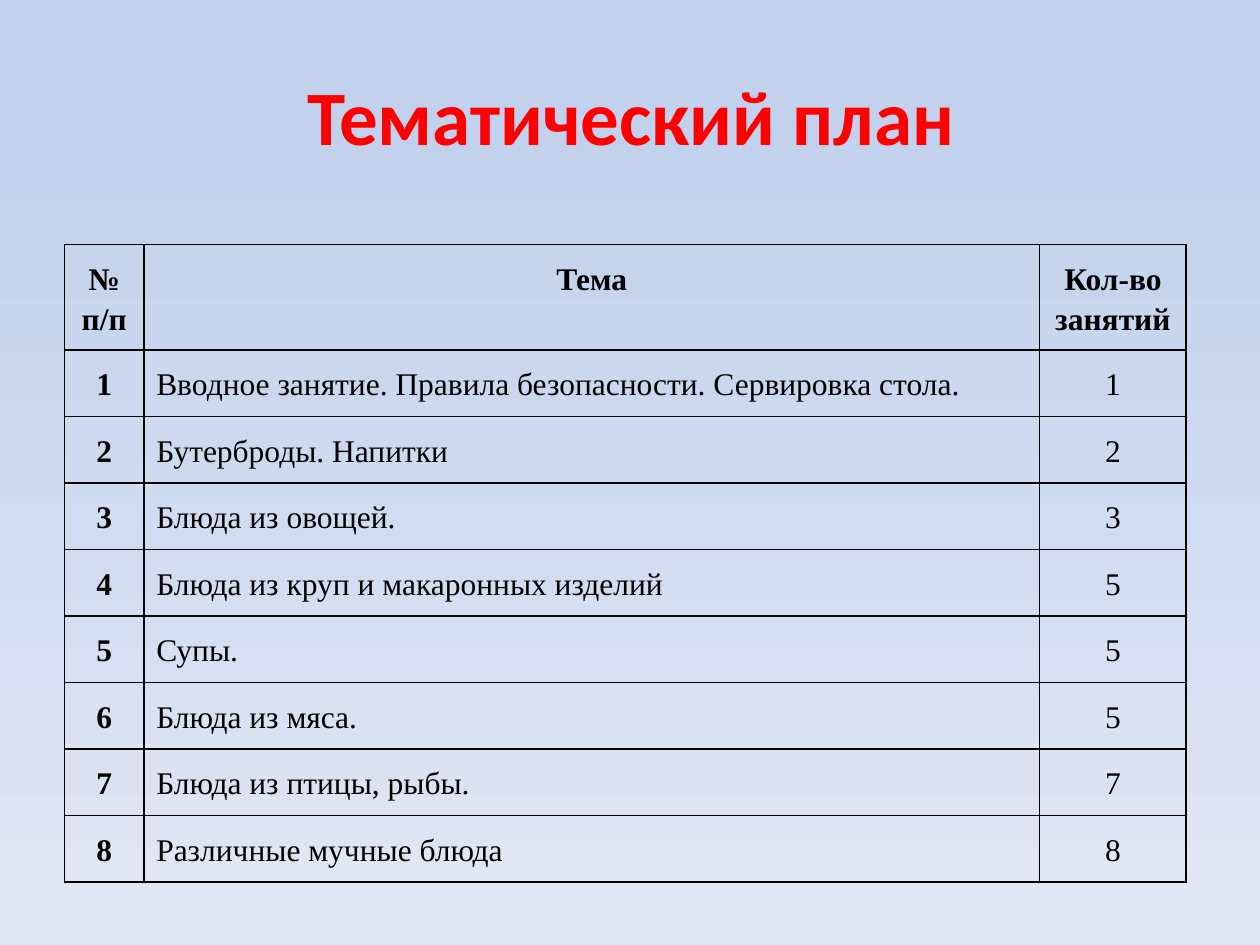
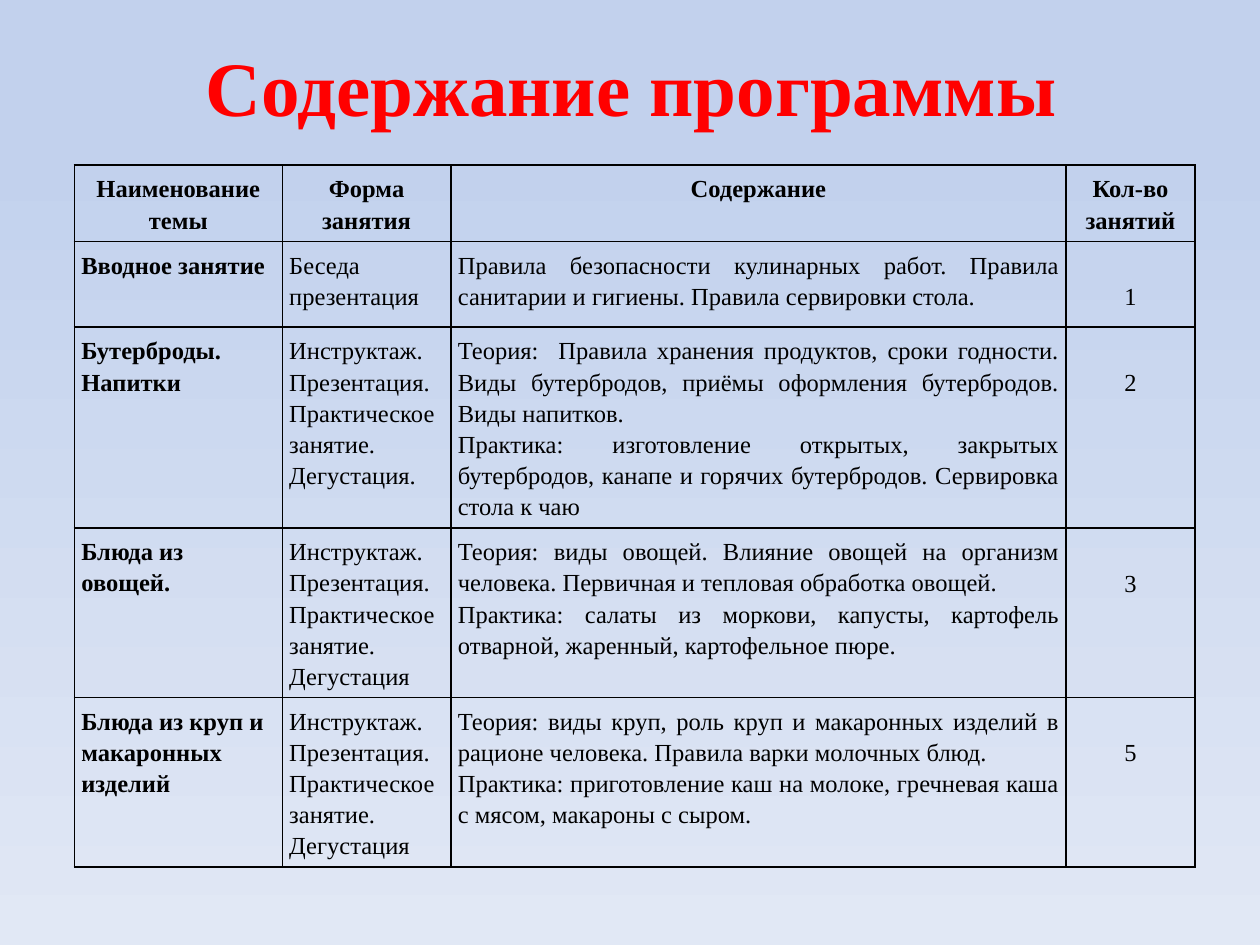
from pptx import Presentation
from pptx.dml.color import RGBColor
from pptx.enum.text import MSO_ANCHOR as Anchor, PP_ALIGN as Align
from pptx.oxml.ns import qn
from pptx.util import Cm, Pt
from lxml.etree import SubElement

RED = RGBColor(0xFF, 0x00, 0x00)
BLACK = RGBColor(0x00, 0x00, 0x00)
SKY = RGBColor(0xC2, 0xD1, 0xED)
PALE_SKY = RGBColor(0xE1, 0xE8, 0xF5)
SERIF = "Times New Roman"
SANS = "Calibri"
TITLE_ONLY = 5
PRACTICE_FORM = "Инструктаж. Презентация. Практическое занятие. Дегустация"

PLAN_HEADER = ("№\nп/п", "Тема", "Кол-во занятий")
PLAN_TOPICS = (
    ("Вводное занятие. Правила безопасности. Сервировка стола.", 1),
    ("Бутерброды. Напитки", 2),
    ("Блюда из овощей.", 3),
    ("Блюда из круп и макаронных изделий", 5),
    ("Супы.", 5),
    ("Блюда из мяса.", 5),
    ("Блюда из птицы, рыбы.", 7),
    ("Различные мучные блюда", 8),
)
PROGRAM_HEADER = ("Наименование темы", "Форма\nзанятия", "Содержание", "Кол-во занятий")
PROGRAM_TOPICS = (
    ("Вводное занятие", "Беседа презентация",
     "Правила безопасности кулинарных работ. Правила санитарии и гигиены. "
     "Правила сервировки стола.", 1),
    ("Бутерброды. Напитки", PRACTICE_FORM + ".",
     "Теория:  Правила хранения продуктов, сроки годности. Виды бутербродов, "
     "приёмы оформления бутербродов. Виды напитков.\n"
     "Практика: изготовление открытых, закрытых бутербродов, канапе и горячих "
     "бутербродов. Сервировка стола к чаю", 2),
    ("Блюда из овощей.", PRACTICE_FORM,
     "Теория: виды овощей. Влияние овощей на организм человека. "
     "Первичная и тепловая обработка овощей.\n"
     "Практика: салаты из моркови, капусты, картофель отварной, жаренный, "
     "картофельное пюре.", 3),
    ("Блюда из круп и макаронных изделий", PRACTICE_FORM,
     "Теория: виды круп, роль круп и макаронных изделий в рационе человека. "
     "Правила варки молочных блюд.\n"
     "Практика: приготовление каш на молоке, гречневая каша с мясом, "
     "макароны с сыром.", 5),
)


def write_text(frame, text, *, size, font=SERIF, color=BLACK, bold=False,
               align=Align.LEFT, spacing=1.0):
    for index, line in enumerate(text.split("\n")):
        paragraph = frame.add_paragraph() if index else frame.paragraphs[0]
        paragraph.alignment = align
        paragraph.line_spacing = spacing
        run = paragraph.add_run()
        run.text = line
        run.font.size = Pt(size)
        run.font.name = font
        run.font.bold = bold
        run.font.color.rgb = color


def paint_background(master):
    fill = master.background.fill
    fill.gradient()
    fill.gradient_angle = 270
    for stop, color, position in zip(fill.gradient_stops, (SKY, PALE_SKY), (0.16, 1)):
        stop.color.rgb = color
        stop.position = position


def add_titled_slide(deck, heading, top, height, font):
    slide = deck.slides.add_slide(deck.slide_layouts[TITLE_ONLY])
    title = slide.shapes.title
    title.left, title.top, title.width, title.height = Cm(1.3), Cm(top), Cm(22.86), Cm(height)
    title.text_frame.vertical_anchor = Anchor.MIDDLE
    write_text(title.text_frame, heading, size=44, font=font, color=RED,
               bold=True, align=Align.CENTER)
    return slide


def add_borders(cell):
    properties = cell._tc.get_or_add_tcPr()
    for side in ("a:lnL", "a:lnR", "a:lnT", "a:lnB"):
        border = SubElement(properties, qn(side), w=str(Pt(1)))
        solid = SubElement(border, qn("a:solidFill"))
        SubElement(solid, qn("a:srgbClr"), val=str(BLACK))


def fill_cell(cell, text, inset, top_inset, **text_format):
    add_borders(cell)
    cell.fill.background()
    cell.margin_left = cell.margin_right = cell.margin_bottom = Cm(inset)
    cell.margin_top = Cm(top_inset)
    write_text(cell.text_frame, text, spacing=1.15, **text_format)


def add_grid(slide, left, top, widths, heights, rows, aligns, size, inset, count_inset):
    grid = slide.shapes.add_table(len(rows), len(widths), Cm(left), Cm(top),
                                  Cm(sum(widths)), Cm(sum(heights))).table
    grid.first_row = grid.horz_banding = False
    for column, width in zip(grid.columns, widths):
        column.width = Cm(width)
    for row, height in zip(grid.rows, heights):
        row.height = Cm(height)
    last = len(widths) - 1
    for r, values in enumerate(rows):
        for c, value in enumerate(values):
            is_header = r == 0
            is_count = c == last and not is_header
            fill_cell(grid.cell(r, c), str(value), inset,
                      count_inset if is_count else inset, size=size,
                      bold=is_header or c == 0,
                      align=Align.CENTER if is_header else aligns[c])


def add_plan_slide(deck):
    slide = add_titled_slide(deck, "Тематический план", 0.91, 2.82, SANS)
    topics = [(number, *topic) for number, topic in enumerate(PLAN_TOPICS, 1)]
    add_grid(slide, 1.3, 4.93, (1.6, 18.06, 2.95), [2.13] + [1.34] * len(topics),
             [PLAN_HEADER, *topics], (Align.CENTER, Align.LEFT, Align.CENTER),
             size=18, inset=0.25, count_inset=0.25)


def add_program_slide(deck):
    slide = add_titled_slide(deck, "Содержание программы", 0.53, 2.41, SERIF)
    add_grid(slide, 1.5, 3.33, (4.19, 3.4, 12.4, 2.6), (1.53, 1.73, 4.05, 3.41, 3.41),
             [PROGRAM_HEADER, *PROGRAM_TOPICS],
             (Align.LEFT, Align.LEFT, Align.JUSTIFY, Align.CENTER),
             size=14, inset=0.14, count_inset=0.77)


def main():
    deck = Presentation()
    deck.slide_width, deck.slide_height = Cm(25.4), Cm(19.05)
    paint_background(deck.slide_master)
    add_plan_slide(deck)
    add_program_slide(deck)
    deck.save("out.pptx")


if __name__ == "__main__":
    main()
